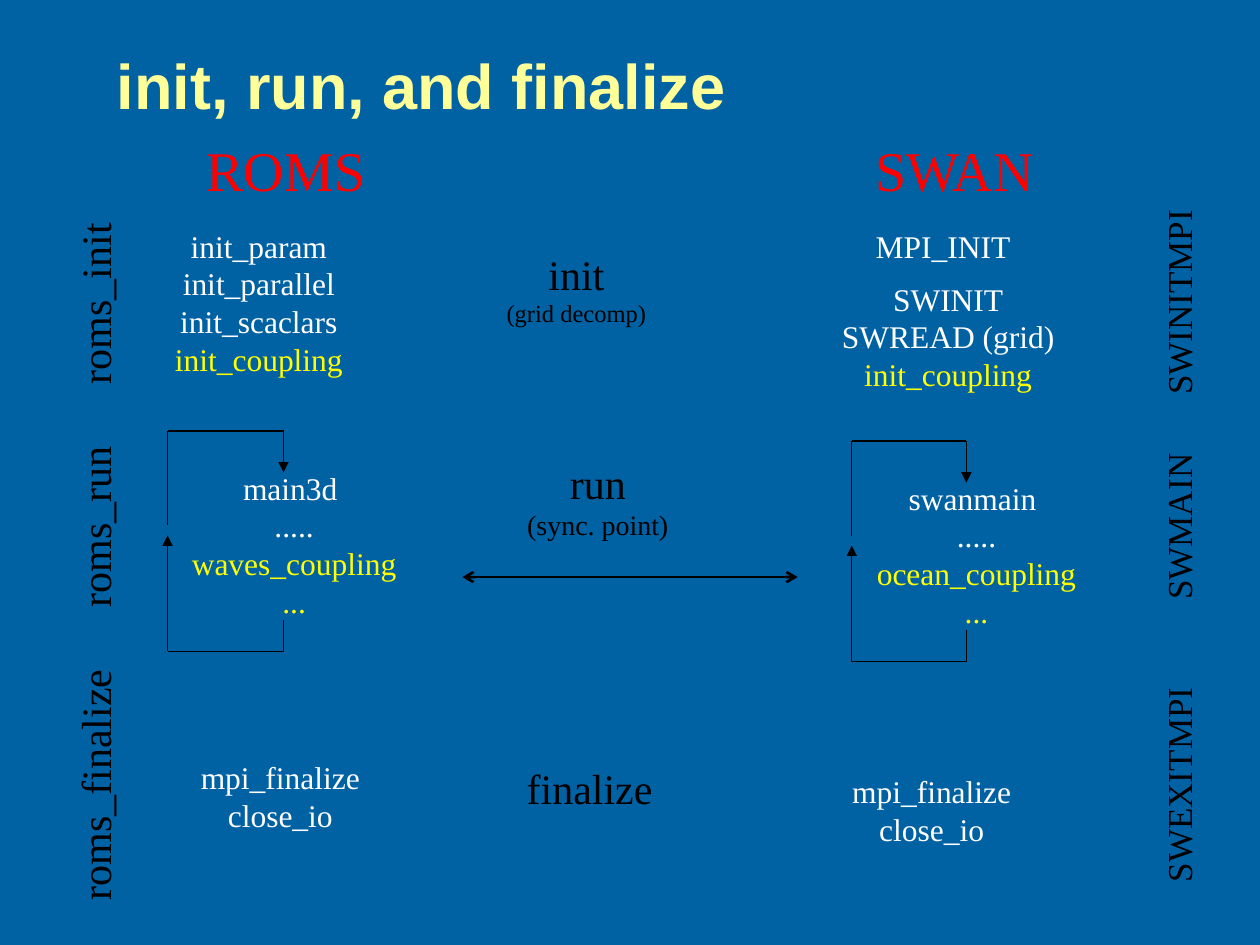
from lxml import etree
from pptx import Presentation
from pptx.dml.color import RGBColor
from pptx.enum.shapes import MSO_CONNECTOR
from pptx.enum.text import MSO_ANCHOR, MSO_AUTO_SIZE, PP_ALIGN
from pptx.oxml.ns import qn
from pptx.util import Inches, Pt

COLORS = {
    "background": "0061A3",
    "title": "FFFF99",
    "model": "FF0000",
    "phase": "000000",
    "call": "FFFFFF",
    "coupling": "FFFF00",
}

prs = Presentation()
prs.slide_width, prs.slide_height = Inches(10), Inches(7.5)
slide = prs.slides.add_slide(prs.slide_layouts[6])
slide.background.fill.solid()
slide.background.fill.fore_color.rgb = RGBColor.from_string(COLORS["background"])


def add_label(left, top, width, height, lines, rotation=0):
    """Add centred, unwrapped text; each line is (text, size, colour key)."""
    label = slide.shapes.add_textbox(
        Inches(left), Inches(top), Inches(width), Inches(height))
    label.rotation = rotation
    frame = label.text_frame
    frame.word_wrap = False
    frame.auto_size = MSO_AUTO_SIZE.SHAPE_TO_FIT_TEXT
    for number, (text, size, color) in enumerate(lines):
        paragraph = frame.add_paragraph() if number else frame.paragraphs[0]
        paragraph.text = text
        paragraph.alignment = PP_ALIGN.CENTER
        paragraph.font.name = "Times New Roman"
        paragraph.font.size = Pt(size)
        paragraph.font.color.rgb = RGBColor.from_string(COLORS[color])
    return frame


def add_line(start, end, width=0.75, head=None, tail=None):
    line = slide.shapes.add_connector(
        MSO_CONNECTOR.STRAIGHT, *(Inches(value) for value in start + end))
    line.line.width = Pt(width)
    line.line.color.rgb = RGBColor.from_string(COLORS["phase"])
    outline = line.line._get_or_add_ln()
    for tag, arrow in (("a:headEnd", head), ("a:tailEnd", tail)):
        if arrow:
            etree.SubElement(outline, qn(tag), type=arrow)
    etree.SubElement(line._element.spPr, qn("a:effectLst"))


# Title and model names
title = add_label(0.83, 0.42, 8.5, 0.5, [("init, run, and finalize", 36, "title")])
title.word_wrap = True
title.auto_size = MSO_AUTO_SIZE.NONE
title.vertical_anchor = MSO_ANCHOR.MIDDLE
title.paragraphs[0].alignment = PP_ALIGN.LEFT
title.paragraphs[0].font.name = "Arial"
title.paragraphs[0].font.bold = True
add_label(1.54, 1.03, 1.46, 0.63, [("ROMS", 32, "model")])
add_label(6.82, 1.03, 1.51, 0.63, [("SWAN", 32, "model")])

# Phases in the middle column
add_label(3.92, 1.92, 1.31, 0.73,
          [("init", 24, "phase"), ("(grid decomp)", 14, "phase")])
add_label(4.08, 3.58, 1.33, 0.77,
          [("run", 24, "phase"), ("(sync. point)", 16, "phase")])
add_label(4.08, 6, 1.2, 0.5, [("finalize", 24, "phase")])

# Calls of each model: plain calls, then the coupling lines
call_lists = [
    (1.29, 1.75, 1.53, 1.3,
     ["init_param", "init_parallel", "init_scaclars"], ["init_coupling"]),
    (1.42, 3.67, 1.83, 1.3, ["main3d ", "....."], ["waves_coupling", "..."]),
    (1.49, 5.97, 1.47, 0.7, ["mpi_finalize", "close_io"], []),
    (6.85, 1.75, 1.27, 0.4, ["MPI_INIT"], []),
    (6.58, 2.17, 1.89, 1, ["SWINIT", "SWREAD (grid)"], ["init_coupling"]),
    (6.86, 3.75, 1.78, 1.3, ["swanmain ", "....."], ["ocean_coupling", "..."]),
    (6.66, 6.08, 1.47, 0.7, ["mpi_finalize", "close_io"], []),
]
for left, top, width, height, calls, couplings in call_lists:
    add_label(left, top, width, height,
              [(call, 18, "call") for call in calls]
              + [(coupling, 18, "coupling") for coupling in couplings])

# Routine names turned along both edges, placed by their centres
routines = [
    ("roms_init", 0.75, 2.41, 1.48, 0.5, 24),
    ("roms_run", 0.75, 4.18, 1.48, 0.5, 24),
    ("roms_finalize", 0.75, 6.23, 2.03, 0.5, 24),
    ("SWINITMPI", 9.35, 2.4, 1.7, 0.43, 20),
    ("SWMAIN", 9.35, 4.18, 1.4, 0.43, 20),
    ("SWEXITMPI", 9.35, 6.23, 1.8, 0.43, 20),
]
for routine, center_x, center_y, width, height, size in routines:
    add_label(center_x - width / 2, center_y - height / 2, width, height,
              [(routine, size, "phase")], rotation=270)

# Time-step loop around each main routine
for left, right, top in ((1.33, 2.25, 3.42), (6.76, 7.67, 3.5)):
    bottom = top + 1.75
    add_line((right, bottom - 0.25), (right, bottom))
    add_line((right, bottom), (left, bottom))
    add_line((left, bottom), (left, top + 0.83), tail="triangle")
    add_line((left, top + 0.75), (left, top))
    add_line((left, top), (right, top))
    add_line((right, top), (right, top + 0.33), tail="triangle")

# Synchronisation between the models
add_line((3.67, 4.58), (6.33, 4.58), width=1.5, head="arrow", tail="arrow")

prs.save("out.pptx")
